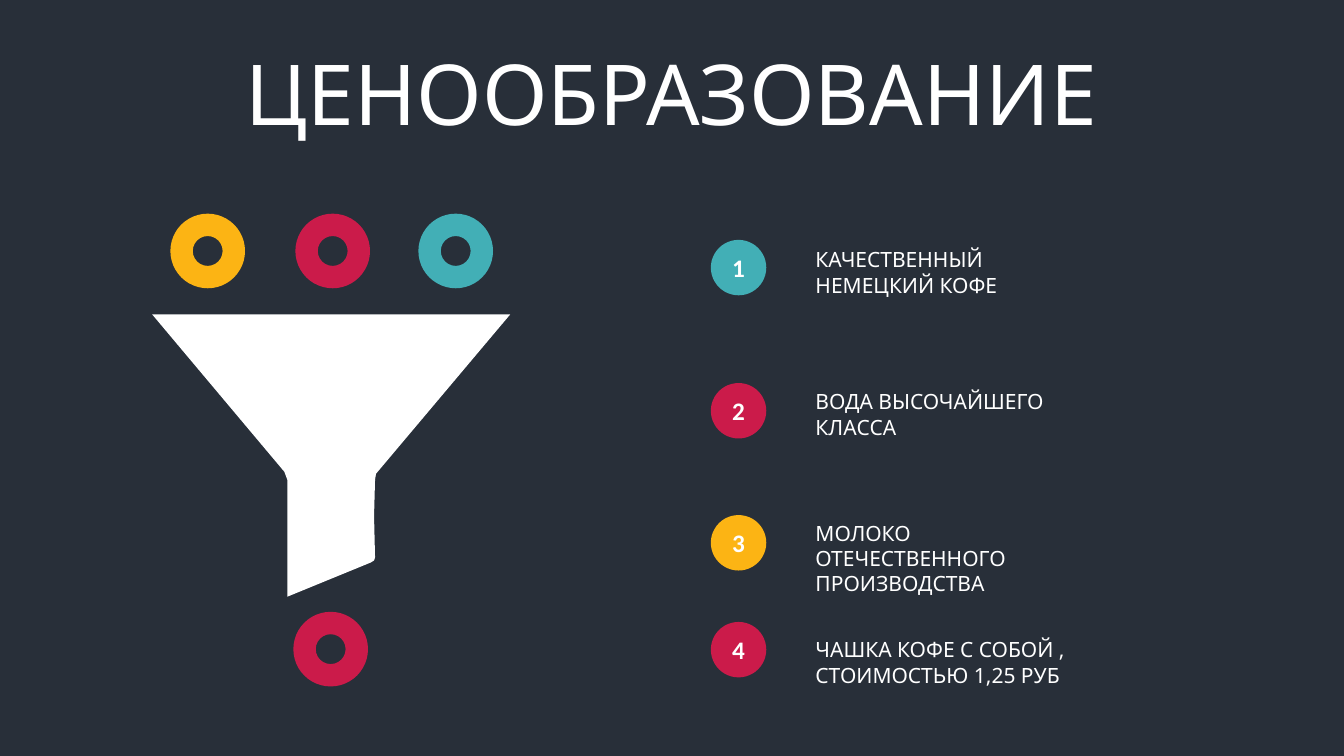
import dataclasses

import pptx
import pptx.dml.color
import pptx.enum.shapes
import pptx.enum.text
import pptx.util

Inches = pptx.util.Inches
SHAPE = pptx.enum.shapes.MSO_SHAPE
ALIGN = pptx.enum.text.PP_ALIGN
ANCHOR = pptx.enum.text.MSO_ANCHOR


@dataclasses.dataclass(frozen=True)
class Theme:
    """Hold the colours, fonts and type sizes of the slide."""
    back: str = "282F39"
    white: str = "FFFFFF"
    gold: str = "FCB414"
    red: str = "CB1B4A"
    teal: str = "42AFB6"
    sans: str = "Noto Sans"
    digit: str = "Calibri"
    head: int = 60
    body: int = 15
    mark: int = 18


THEME = Theme()
FUNNEL = [(0, 0), (355, 0), (222, 158), (221, 164), (220, 200), (221, 241),
          (220, 244), (217, 246), (134, 280), (134, 164), (131, 156)]


def tint(fill, color):
    """Set a solid fill."""
    fill.solid()
    fill.fore_color.rgb = pptx.dml.color.RGBColor.from_string(color)


def write(shape, text, size=THEME.body, font=THEME.sans, bold=False,
          align=ALIGN.LEFT, anchor=ANCHOR.TOP, inset=0.1):
    """Put formatted white text in a shape."""
    frame = shape.text_frame
    frame.text = text
    frame.word_wrap = True
    frame.auto_size = pptx.enum.text.MSO_AUTO_SIZE.NONE
    frame.vertical_anchor = anchor
    frame.margin_left = frame.margin_right = Inches(inset)
    frame.margin_top = frame.margin_bottom = Inches(inset / 2)
    for para in frame.paragraphs:
        para.alignment = align
        para.font.size = pptx.util.Pt(size)
        para.font.name = font
        para.font.bold = bold
        tint(para.font.fill, THEME.white)


def paint(shape, color):
    """Give a shape a flat fill with no line or shadow."""
    shape.shadow.inherit = False
    tint(shape.fill, color)
    shape.line.fill.background()


def disc(slide, kind, left, top, size, color):
    """Add a round shape and return it."""
    shape = slide.shapes.add_shape(
        kind, Inches(left), Inches(top), Inches(size), Inches(size))
    paint(shape, color)
    return shape


def header(slide, left, top, width, height):
    """Place the slide title."""
    title = slide.shapes.title
    title.left, title.top = Inches(left), Inches(top)
    title.width, title.height = Inches(width), Inches(height)
    write(title, "ЦЕНООБРАЗОВАНИЕ", size=THEME.head, align=ALIGN.CENTER)


def funnel(slide, left, top):
    """Draw the funnel with three rings above and one below."""
    form = slide.shapes.build_freeform(*FUNNEL[0], scale=Inches(0.01))
    form.add_line_segments(FUNNEL[1:], close=True)
    paint(form.convert_to_shape(Inches(left), Inches(top + 1)), THEME.white)
    rings = [(0.18, 0, THEME.gold), (1.42, 0, THEME.red),
             (2.64, 0, THEME.teal), (1.4, 3.95, THEME.red)]
    for across, down, color in rings:
        ring = disc(slide, SHAPE.DONUT, left + across, top + down, 0.74, color)
        ring.adjustments[0] = 0.3


def legend(slide, left, top):
    """List the numbered parts of the price."""
    items = [
        (0, 0.02, THEME.teal, "КАЧЕСТВЕННЫЙ НЕМЕЦКИЙ КОФЕ"),
        (1.42, 0.01, THEME.red, "ВОДА ВЫСОЧАЙШЕГО КЛАССА"),
        (2.73, 0, THEME.gold, "МОЛОКО ОТЕЧЕСТВЕННОГО ПРОИЗВОДСТВА"),
        (3.79, 0.1, THEME.red, "ЧАШКА КОФЕ С СОБОЙ ,\nСТОИМОСТЬЮ 1,25 РУБ"),
    ]
    for number, (down, drop, color, text) in enumerate(items, 1):
        badge = disc(slide, SHAPE.OVAL, left, top + down, 0.55, color)
        write(badge, str(number), size=THEME.mark, font=THEME.digit,
              bold=True, align=ALIGN.CENTER, anchor=ANCHOR.MIDDLE, inset=0)
        label = slide.shapes.add_textbox(
            Inches(left + 0.94), Inches(top + down + drop),
            Inches(3.04), Inches(0.61))
        write(label, text)


def main():
    """Build and save the slide."""
    deck = pptx.Presentation()
    deck.slide_width, deck.slide_height = Inches(13.33), Inches(7.5)
    slide = deck.slides.add_slide(deck.slide_layouts[5])
    tint(slide.background.fill, THEME.back)
    header(slide, 2.06, 0.36, 9.19, 1.11)
    funnel(slide, 1.51, 2.12)
    legend(slide, 7.05, 2.38)
    deck.save("out.pptx")


if __name__ == "__main__":
    main()
